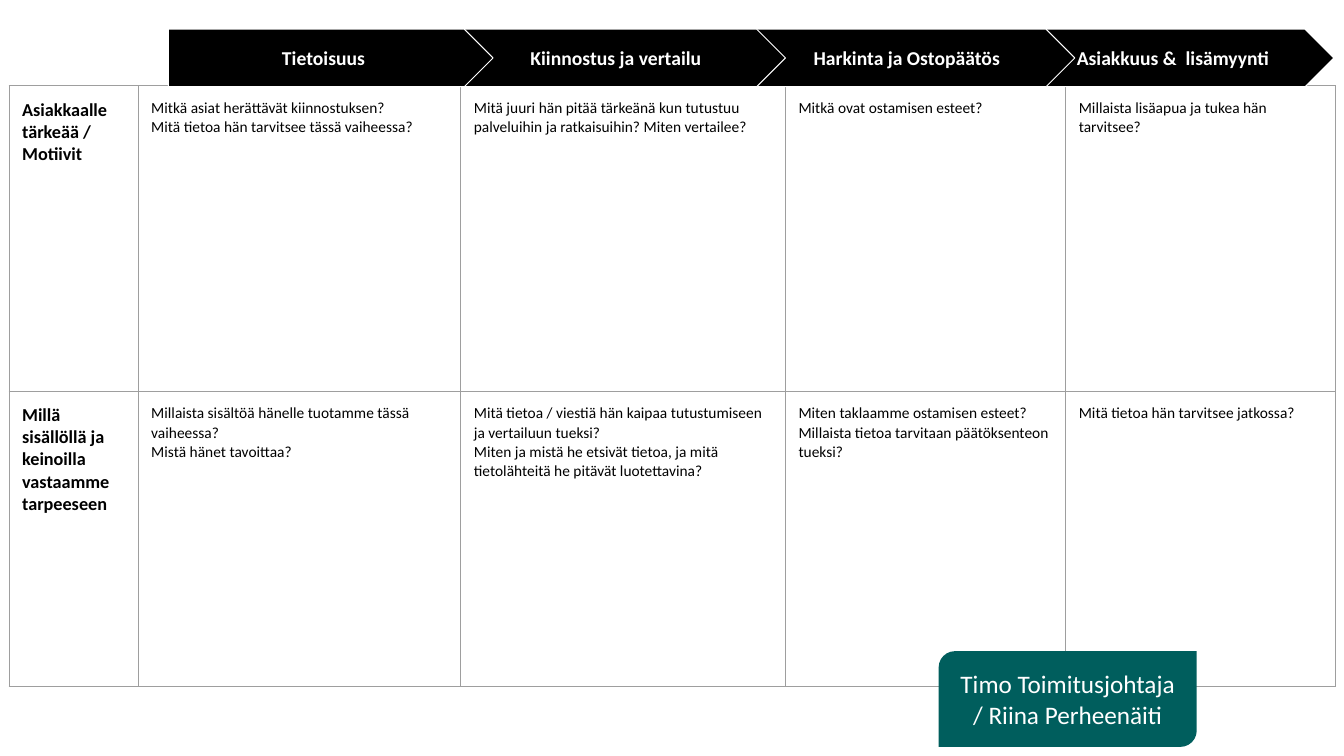
"""Build a customer journey table under a row of stage arrows."""
import pptx
import pptx.dml.color
import pptx.enum.shapes
import pptx.enum.text
import pptx.oxml
import pptx.oxml.ns
import pptx.util

PX = 9144
FONT = "Calibri"
BLACK, WHITE, GREY, TEAL = "000000", "FFFFFF", "9E9E9E", "005E5D"
INSET = 13

STAGES = [
    ("Tietoisuus", 167, 322),
    ("Kiinnostus ja vertailu", 457, 322),
    ("Harkinta ja Ostopäätös", 747, 319),
    ("Asiakkuus &  lisämyynti", 1037, 286),
]
STAGE_TOP, STAGE_HEIGHT = 29, 57
LAST_STAGE_INSET = 31

JOURNEY = [
    ["Asiakkaalle tärkeää /\nMotiivit",
     "Mitkä asiat herättävät kiinnostuksen?\nMitä tietoa hän tarvitsee tässä vaiheessa?",
     "Mitä juuri hän pitää tärkeänä kun tutustuu palveluihin ja ratkaisuihin? Miten vertailee?",
     "Mitkä ovat ostamisen esteet?",
     "Millaista lisäapua ja tukea hän tarvitsee?"],
    ["Millä sisällöllä ja keinoilla vastaamme tarpeeseen",
     "Millaista sisältöä hänelle tuotamme tässä vaiheessa?\nMistä hänet tavoittaa?",
     "Mitä tietoa / viestiä hän kaipaa tutustumiseen ja vertailuun tueksi?\n"
     "Miten ja mistä he etsivät tietoa, ja mitä tietolähteitä he pitävät luotettavina?",
     "Miten taklaamme ostamisen esteet?\nMillaista tietoa tarvitaan päätöksenteon tueksi?",
     "Mitä tietoa hän tarvitsee jatkossa?"],
]
JOURNEY_LEFT, JOURNEY_TOP = 9, 85
COLUMN_WIDTHS = [128, 320, 322, 278, 268]
ROW_HEIGHTS = [303, 293]

PERSONA = "Timo\u00a0Toimitusjohtaja / Riina Perheenäiti"
PERSONA_BOX = (931, 646, 256, 95)


def px(*lengths):
    return [length * PX for length in lengths]


def colour(value):
    return pptx.dml.color.RGBColor.from_string(value)


def paint(fill, value):
    fill.solid()
    fill.fore_color.rgb = colour(value)


def write(frame, text, size, ink, bold=False, align=None):
    frame.text = text
    for paragraph in frame.paragraphs:
        paragraph.alignment = align
        paragraph.font.name = FONT
        paragraph.font.size = pptx.util.Pt(size)
        paragraph.font.bold = bold
        paragraph.font.color.rgb = colour(ink)


def pad(holder):
    for side in ("left", "top", "right", "bottom"):
        setattr(holder, f"margin_{side}", INSET * PX)


def border(cell):
    properties = cell._tc.get_or_add_tcPr()
    for position, side in enumerate("LRTB"):
        properties.insert(position, pptx.oxml.parse_xml(
            f'<a:ln{side} {pptx.oxml.ns.nsdecls("a")} w="9525"><a:solidFill>'
            f'<a:srgbClr val="{GREY}"/></a:solidFill></a:ln{side}>'))


def add_journey(slide):
    box = px(JOURNEY_LEFT, JOURNEY_TOP, sum(COLUMN_WIDTHS), sum(ROW_HEIGHTS))
    journey = slide.shapes.add_table(len(ROW_HEIGHTS), len(COLUMN_WIDTHS), *box).table
    journey.first_row = journey.horz_banding = False
    for column, width in zip(journey.columns, COLUMN_WIDTHS):
        column.width = width * PX
    for row, height, texts in zip(journey.rows, ROW_HEIGHTS, JOURNEY):
        row.height = height * PX
        for index, (cell, text) in enumerate(zip(row.cells, texts)):
            is_label = index == 0
            pad(cell)
            paint(cell.fill, WHITE)
            border(cell)
            write(cell.text_frame, text, 13 if is_label else 11, BLACK, is_label)


def add_block(slide, kind, box, fill, text, size, bold, align):
    block = slide.shapes.add_shape(kind, *px(*box))
    block.shadow.inherit = False
    paint(block.fill, fill)
    block.line.fill.background()
    frame = block.text_frame
    frame.word_wrap = True
    frame.vertical_anchor = pptx.enum.text.MSO_ANCHOR.MIDDLE
    pad(frame)
    write(frame, text, size, WHITE, bold, align)
    return block


def main():
    deck = pptx.Presentation()
    deck.slide_width, deck.slide_height = px(1333, 750)
    slide = deck.slides.add_slide(deck.slide_layouts[6])
    kinds = pptx.enum.shapes.MSO_SHAPE
    aligns = pptx.enum.text.PP_ALIGN

    add_journey(slide)
    for stage in reversed(STAGES):
        text, left, width = stage
        is_last = stage == STAGES[-1]
        arrow = add_block(slide, kinds.PENTAGON, (left, STAGE_TOP, width, STAGE_HEIGHT),
                          BLACK, text, 14, True, aligns.LEFT if is_last else aligns.CENTER)
        arrow.line.color.rgb = colour(WHITE)
        arrow.line.width = pptx.util.Pt(0.75)
        if is_last:
            arrow.text_frame.margin_left = LAST_STAGE_INSET * PX

    persona = add_block(slide, kinds.ROUND_2_DIAG_RECTANGLE, PERSONA_BOX,
                        TEAL, PERSONA, 18, False, aligns.CENTER)
    persona.adjustments[0] = 0.17
    persona.adjustments[1] = 0
    deck.save("out.pptx")


if __name__ == "__main__":
    main()
